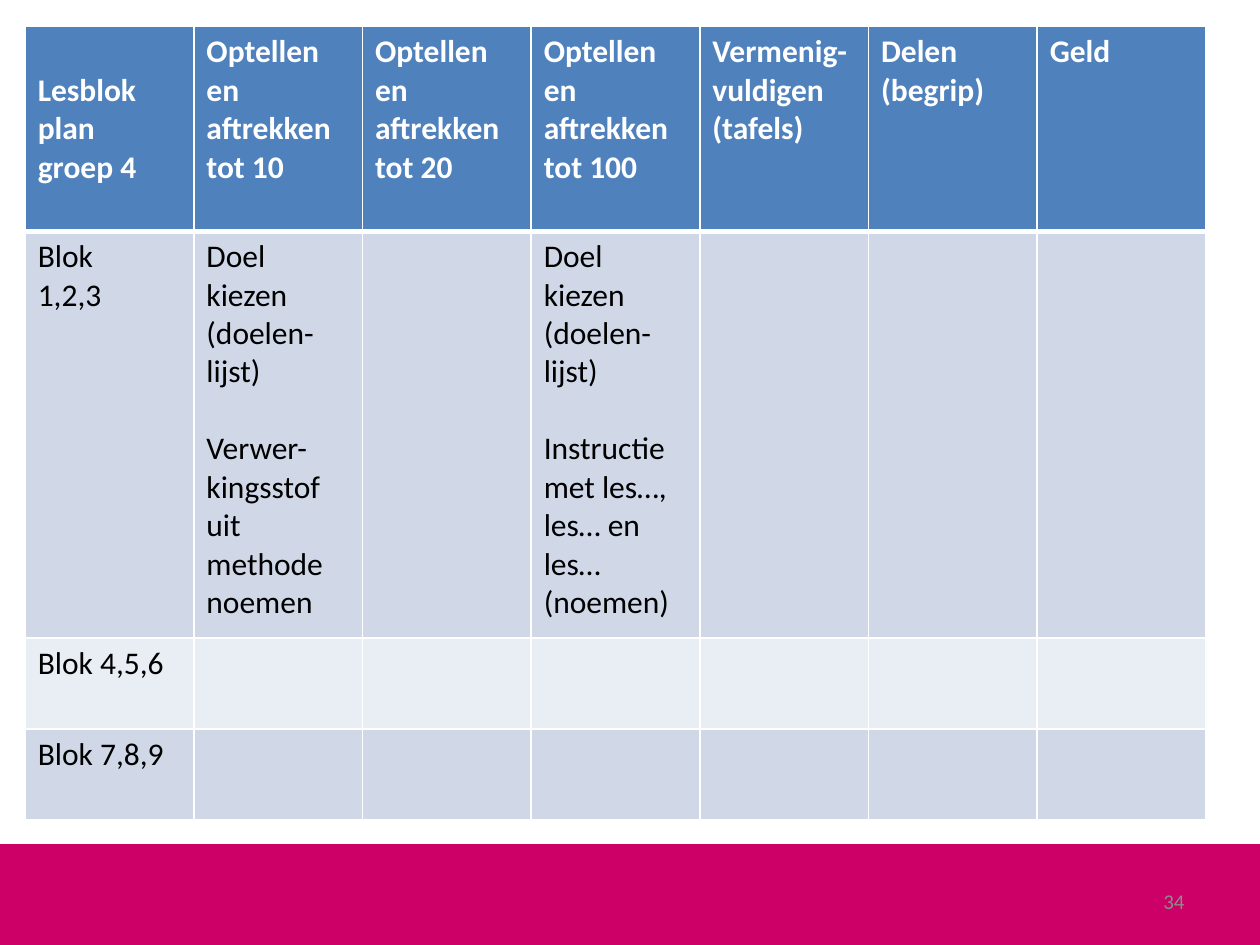
import lxml.etree
import pptx
import pptx.dml.color
import pptx.enum.shapes
import pptx.enum.text
import pptx.oxml.ns
import pptx.util

Pt = pptx.util.Pt
RGBColor = pptx.dml.color.RGBColor

WHITE = RGBColor(0xFF, 0xFF, 0xFF)
BLACK = RGBColor(0x00, 0x00, 0x00)
GREY = RGBColor(0x8C, 0x8C, 0x8C)
PINK = RGBColor(0xCC, 0x00, 0x66)
HEADER_BLUE = RGBColor(0x4F, 0x81, 0xBD)
BAND_DARK = RGBColor(0xD0, 0xD8, 0xE8)
BAND_LIGHT = RGBColor(0xE9, 0xED, 0xF4)

FONT = "Calibri"
LINE = 22  # height of one line of 18 pt text
COLUMN_WIDTH = 96.4
ROW_HEIGHTS = [117, 232.5, 52, 52]

HEADERS = [
    ["Lesblok", "plan", "groep 4"],
    ["Optellen en aftrekken tot 10"],
    ["Optellen en aftrekken tot 20"],
    ["Optellen en aftrekken tot 100"],
    ["Vermenig-vuldigen (tafels)"],
    ["Delen (begrip)"],
    ["Geld"],
]
# Body texts by row and column; the other cells stay empty
BODY = {
    (1, 0): ["Blok", "1,2,3"],
    (1, 1): ["Doel kiezen", "(doelen-lijst)", "Verwer-kingsstof uit methode noemen"],
    (1, 3): ["Doel kiezen", "(doelen-", "lijst)", "Instructie",
             "met les…, les… en les…", "(noemen)"],
    (2, 0): ["Blok 4,5,6"],
    (3, 0): ["Blok 7,8,9"],
}
# Paragraphs that open a new part, one line below the text before
PART_STARTS = {"Verwer-kingsstof uit methode noemen", "Instructie"}


def write_text(para, text, size=18, color=BLACK, bold=False, align=None, before=0):
    para.alignment = align
    if before:
        para.space_before = Pt(before)
    span = para.add_run()
    span.text = text
    span.font.name = FONT
    span.font.size = Pt(size)
    span.font.bold = bold
    span.font.color.rgb = color


def write_cell(cell, texts, **text_format):
    frame = cell.text_frame
    for index, text in enumerate(texts):
        para = frame.add_paragraph() if index else frame.paragraphs[0]
        write_text(para, text, before=LINE if text in PART_STARTS else 0, **text_format)


def set_borders(cell, top=1, bottom=1):
    properties = cell._tc.get_or_add_tcPr()
    for tag, width in [("a:lnL", 1), ("a:lnR", 1), ("a:lnT", top), ("a:lnB", bottom)]:
        line = lxml.etree.SubElement(properties, pptx.oxml.ns.qn(tag), w=str(Pt(width)))
        fill = lxml.etree.SubElement(line, pptx.oxml.ns.qn("a:solidFill"))
        lxml.etree.SubElement(fill, pptx.oxml.ns.qn("a:srgbClr"), val=str(WHITE))


def set_fill(cell, color):
    cell.fill.solid()
    cell.fill.fore_color.rgb = color


def add_footer(page):
    band = page.shapes.add_shape(
        pptx.enum.shapes.MSO_SHAPE.RECTANGLE, Pt(0), Pt(482.4), Pt(720), Pt(57.6))
    band.shadow.inherit = False
    band.fill.solid()
    band.fill.fore_color.rgb = PINK
    band.line.fill.background()

    box = page.shapes.add_textbox(Pt(516), Pt(500.5), Pt(168), Pt(28.75))
    frame = box.text_frame
    frame.word_wrap = True
    frame.vertical_anchor = pptx.enum.text.MSO_ANCHOR.MIDDLE
    write_text(frame.paragraphs[0], "34", size=12, color=GREY,
               align=pptx.enum.text.PP_ALIGN.RIGHT)


def add_plan_table(page):
    table = page.shapes.add_table(
        len(ROW_HEIGHTS), len(HEADERS), Pt(14.4), Pt(15.2),
        Pt(COLUMN_WIDTH * len(HEADERS)), Pt(sum(ROW_HEIGHTS))).table
    for column in table.columns:
        column.width = Pt(COLUMN_WIDTH)
    for row, height in zip(table.rows, ROW_HEIGHTS):
        row.height = Pt(height)

    # Header row, with a thick rule below it
    for column, texts in enumerate(HEADERS):
        cell = table.cell(0, column)
        set_borders(cell, bottom=3)
        set_fill(cell, HEADER_BLUE)
        write_cell(cell, texts, color=WHITE, bold=True)
    table.cell(0, 0).margin_top = Pt(3.6 + LINE)

    # Body rows in alternating bands
    for row in range(1, len(ROW_HEIGHTS)):
        for column in range(len(HEADERS)):
            cell = table.cell(row, column)
            set_borders(cell, top=3 if row == 1 else 1)
            set_fill(cell, BAND_DARK if row % 2 else BAND_LIGHT)
            write_cell(cell, BODY.get((row, column), []))


def main():
    deck = pptx.Presentation()
    deck.slide_width = Pt(720)
    deck.slide_height = Pt(540)
    page = deck.slides.add_slide(deck.slide_layouts[6])
    add_footer(page)
    add_plan_table(page)
    deck.save("out.pptx")


if __name__ == "__main__":
    main()
